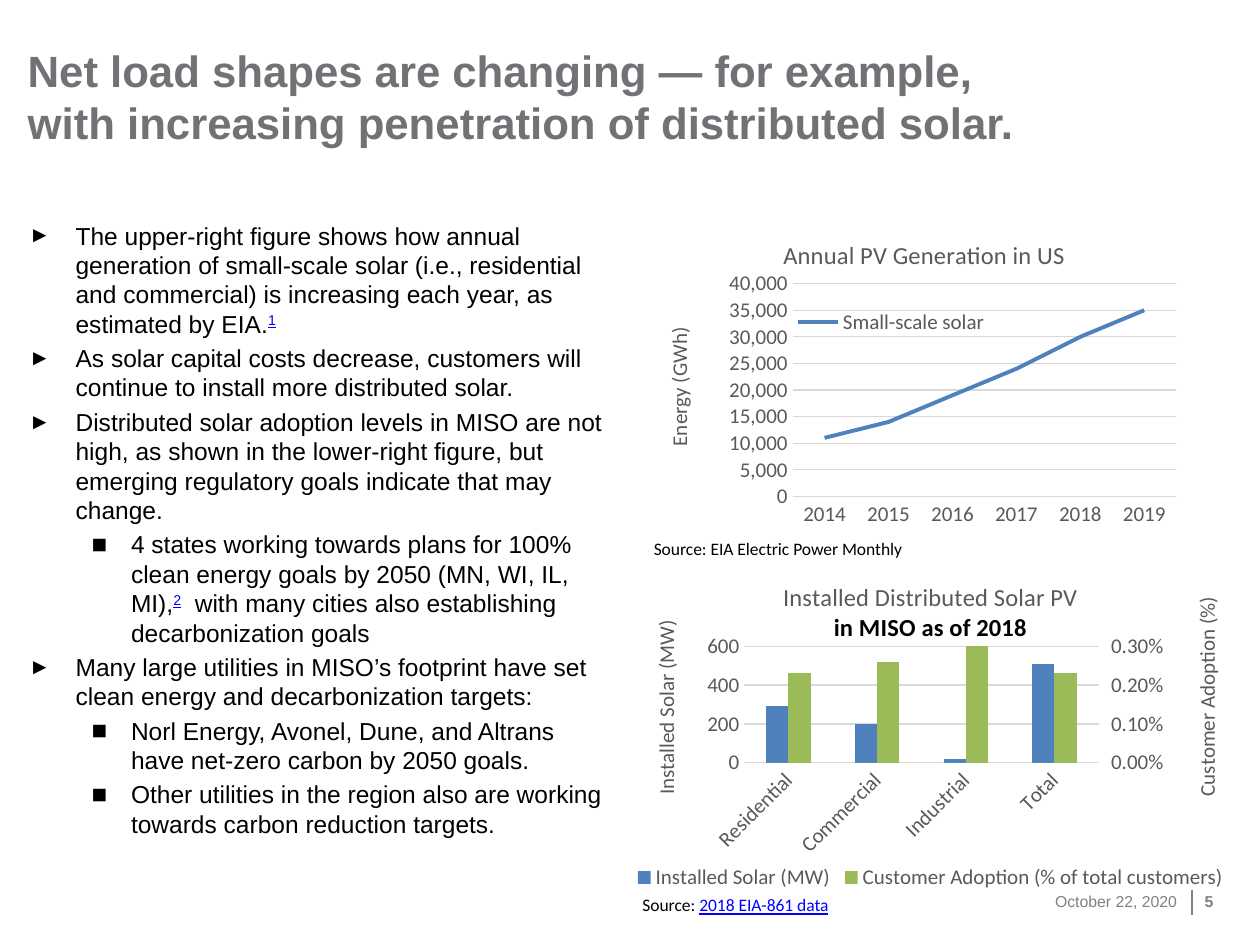
from copy import deepcopy

from lxml import etree
from pptx import Presentation
from pptx.chart.axis import ValueAxis
from pptx.chart.data import CategoryChartData
from pptx.dml.color import RGBColor
from pptx.enum.chart import XL_CHART_TYPE, XL_LEGEND_POSITION, XL_TICK_MARK
from pptx.enum.text import MSO_ANCHOR, MSO_AUTO_SIZE, PP_ALIGN
from pptx.oxml.ns import qn
from pptx.util import Inches, Pt

GRAY, LINK, BLUE, GREEN = "595959", "0000FF", "4F81BD", "9BBB59"
RULE, FOOTER = "D9D9D9", "808080"

# level, then text pieces; a piece starting with "^" is a linked note mark
POINTS = [
    (0, ["The upper-right figure shows how annual generation of small-scale solar "
         "(i.e., residential and commercial) is increasing each year, as estimated by EIA.", "^1"]),
    (0, ["As solar capital costs decrease, customers will continue to install more distributed solar."]),
    (0, ["Distributed solar adoption levels in MISO are not high, as shown in the lower-right "
         "figure, but emerging regulatory goals indicate that may change."]),
    (1, ["4 states working towards plans for 100% clean energy goals by 2050 (MN, WI, IL, MI),",
         "^2", "  with many cities also establishing decarbonization goals"]),
    (0, ["Many large utilities in MISO’s footprint have set clean energy and decarbonization targets:"]),
    (1, ["Norl Energy, Avonel, Dune, and Altrans have net-zero carbon by 2050 goals."]),
    (1, ["Other utilities in the region also are working towards carbon reduction targets."]),
]
# margin, hanging indent, bullet, bullet size
LEVELS = [(0.37, -0.37, "►", "90000"), (0.81, -0.31, "◼", "100000")]


def rgb(value):
    return RGBColor.from_string(value)


def style(font, size, color, name="Calibri", bold=False):
    font.size, font.name, font.bold = Pt(size), name, bold
    font.color.rgb = rgb(color)


def add_child(parent, tag, **attributes):
    child = etree.SubElement(parent, qn(tag))
    for key, value in attributes.items():
        child.set(key, value)
    return child


def frame(shape, inset=0, anchor=MSO_ANCHOR.TOP):
    text = shape.text_frame
    text.word_wrap, text.auto_size, text.vertical_anchor = True, MSO_AUTO_SIZE.NONE, anchor
    text.margin_left = text.margin_right = Inches(inset)
    text.margin_top = text.margin_bottom = Inches(inset / 2)
    return text


def text_box(slide, left, top, width, height, inset=0, anchor=MSO_ANCHOR.TOP):
    box = slide.shapes.add_textbox(Inches(left), Inches(top), Inches(width), Inches(height))
    return frame(box, inset, anchor)


def add_link(paragraph, words):
    run = paragraph.add_run()
    run.text = words
    run.font.underline = True
    run.font.color.rgb = rgb(LINK)
    return run


def heading(slide, left, top, width, height):
    title = slide.shapes.title
    title.left, title.top, title.width, title.height = map(Inches, (left, top, width, height))
    text = frame(title, anchor=MSO_ANCHOR.BOTTOM)
    text.text = "Net load shapes are changing — for example, with increasing penetration of distributed solar."
    text.paragraphs[0].alignment = PP_ALIGN.LEFT
    style(text.paragraphs[0].font, 25, "707276", "Arial", True)


def bullet_list(slide, left, top, width, height):
    text = text_box(slide, left, top, width, height)
    for number, (level, pieces) in enumerate(POINTS):
        point = text.add_paragraph() if number else text.paragraphs[0]
        margin, hanging, mark, mark_size = LEVELS[level]
        point.level = level
        properties = point._p.get_or_add_pPr()
        properties.set("marL", str(Inches(margin)))
        properties.set("indent", str(Inches(hanging)))
        add_child(properties, "a:buSzPct", val=mark_size)
        add_child(properties, "a:buFont", typeface="Arial")
        add_child(properties, "a:buChar", char=mark)
        if number:
            point.space_before = Pt(2.8)
        style(point.font, 14, "000000", "Arial")
        for piece in pieces:
            if piece.startswith("^"):
                note = add_link(point, piece[1:])
                note._r.get_or_add_rPr().set("baseline", "30000")
            else:
                point.add_run().text = piece


def source_line(slide, left, top, width, height, words, link=None):
    source = text_box(slide, left, top, width, height, inset=0.1).paragraphs[0]
    style(source.font, 10, "000000")
    source.add_run().text = words
    if link:
        add_link(source, link)


def place(element, **fractions):
    """Lay out a title, legend or plot area by fractions of its chart."""
    for old in element.findall(qn("c:layout")):
        element.remove(old)
    layout = etree.Element(qn("c:layout"))
    manual = add_child(layout, "c:manualLayout")
    if element.tag == qn("c:plotArea"):
        add_child(manual, "c:layoutTarget", val="inner")
    for key in "xy":
        add_child(manual, f"c:{key}Mode", val="edge")
    for key, value in fractions.items():
        add_child(manual, f"c:{key}", val=str(value))
    leading = [qn(tag) for tag in ("c:tx", "c:legendPos", "c:legendEntry")]
    element.insert(sum(child.tag in leading for child in element), layout)


def trim_legend(chart, hidden):
    """Leave the spacer series out of the legend."""
    position = chart.legend._element.find(qn("c:legendPos"))
    for number in reversed(hidden):
        entry = etree.Element(qn("c:legendEntry"))
        add_child(entry, "c:idx", val=str(number))
        add_child(entry, "c:delete", val="1")
        position.addnext(entry)


def value_axis(axis, title, x, y, maximum, step, number_format, tick=XL_TICK_MARK.NONE):
    axis.minimum_scale, axis.maximum_scale, axis.major_unit = 0, maximum, step
    axis.major_tick_mark = tick
    axis.tick_labels.number_format = number_format
    axis.tick_labels.number_format_is_linked = False
    style(axis.tick_labels.font, 12, GRAY)
    axis.format.line.fill.background()
    text = axis.axis_title.text_frame
    text.text = title
    style(text.paragraphs[0].font, 12, GRAY)
    turn = text._txBody.find(qn("a:bodyPr"))
    turn.set("rot", "-5400000")
    turn.set("vert", "horz")
    place(axis.axis_title._element, x=x, y=y)


def base_chart(slide, kind, box, categories, series, title, plot):
    data = CategoryChartData()
    data.categories = categories
    for name, values in series:
        data.add_series(name, values)
    chart = slide.shapes.add_chart(kind, *map(Inches, box), data).chart
    style(chart.font, 10, "000000")
    chart.has_title = True
    chart.chart_title.text_frame.text = title
    style(chart.chart_title.text_frame.paragraphs[0].font, 14, GRAY)
    chart.has_legend = True
    chart.legend.position = XL_LEGEND_POSITION.BOTTOM
    chart.legend.include_in_layout = False
    style(chart.legend.font, 12, GRAY)
    chart.plots[0].vary_by_categories = False
    category_axis = chart.category_axis
    category_axis.major_tick_mark = XL_TICK_MARK.NONE
    category_axis.format.line.color.rgb = rgb(RULE)
    style(category_axis.tick_labels.font, 12, GRAY)
    grid = chart.value_axis.major_gridlines.format.line
    grid.color.rgb, grid.width = rgb(RULE), Pt(0.75)
    place(chart._chartSpace.chart.plotArea, **dict(zip("xywh", plot)))
    return chart


def generation_chart(slide, *box):
    chart = base_chart(
        slide, XL_CHART_TYPE.LINE, box, ["2014", "2015", "2016", "2017", "2018", "2019"],
        [("Small-scale solar", [11000, 14000, 19000, 24000, 30000, 35000]), ("Series 2", [None] * 6)],
        "Annual PV Generation in US", (0.26, 0.19, 0.7, 0.64))
    value_axis(chart.value_axis, "Energy (GWh)", 0.02, 0.31, 40000, 5000, "#,##0")
    for series, color in zip(chart.plots[0].series, (BLUE, GREEN)):
        series.smooth = False
        series.format.line.color.rgb, series.format.line.width = rgb(color), Pt(2.25)
    trim_legend(chart, [1])
    place(chart.legend._element, x=0.23, y=0.25, w=0.42, h=0.11)


def adoption_chart(slide, *box):
    # Zero series hold the neighbouring bar slot on each axis
    chart = base_chart(
        slide, XL_CHART_TYPE.COLUMN_CLUSTERED, box,
        ["Residential", "Commercial", "Industrial", "Total"],
        [("Installed Solar (MW)", [290, 200, 20, 510]), ("Series 2", [0] * 4), ("Series 3", [0] * 4),
         ("Customer Adoption (% of total customers)", [0.0023, 0.0026, 0.0032, 0.0023])],
        "Installed Distributed Solar PV", (0.19, 0.25, 0.59, 0.35))
    second_line = chart.chart_title.text_frame.add_paragraph()
    second_line.text = "in MISO as of 2018"
    style(second_line.font, 14, "000000", bold=True)
    value_axis(chart.value_axis, "Installed Solar (MW)", 0.03, 0.16, 600, 200, "General")
    labels = chart.category_axis._element.find(qn("c:txPr"))
    labels.find(qn("a:bodyPr")).set("rot", "-2700000")
    columns = chart.plots[0]
    columns.gap_width, columns.overlap = 200, 0
    for series, color in zip(columns.series, (BLUE, "8064A2", "4BACC6", GREEN)):
        series.format.fill.solid()
        series.format.fill.fore_color.rgb = rgb(color)

    # Right axis: the last two series move to a second group of columns
    area = chart._chartSpace.chart.plotArea
    left_bars = area.find(qn("c:barChart"))
    right_bars = deepcopy(left_bars)
    left_bars.addnext(right_bars)
    for bars, dropped in ((left_bars, slice(2, 4)), (right_bars, slice(0, 2))):
        for series in bars.findall(qn("c:ser"))[dropped]:
            bars.remove(series)
    left_categories, left_values = area.find(qn("c:catAx")), area.find(qn("c:valAx"))
    right_categories, right_values = deepcopy(left_categories), deepcopy(left_values)
    left_values.addnext(right_values)
    right_values.addnext(right_categories)
    for axis, own, other in ((right_categories, "501", "502"), (right_values, "502", "501")):
        axis.find(qn("c:axId")).set("val", own)
        axis.find(qn("c:crossAx")).set("val", other)
    for reference, number in zip(right_bars.findall(qn("c:axId")), ("501", "502")):
        reference.set("val", number)
    right_categories.find(qn("c:delete")).set("val", "1")
    right_values.find(qn("c:axPos")).set("val", "r")
    right_values.find(qn("c:crosses")).set("val", "max")
    adoption = ValueAxis(right_values)
    adoption.has_major_gridlines = False
    value_axis(adoption, "Customer Adoption (%)", 0.93, 0.09, 0.003, 0.001, "0.00%",
               XL_TICK_MARK.OUTSIDE)

    trim_legend(chart, [1, 2])
    place(chart.legend._element, x=0, y=0.89, w=1, h=0.11)


def footer(slide, left, top, width, height):
    divider = left + width - 0.35
    date = text_box(slide, left, top, width - 0.47, height, anchor=MSO_ANCHOR.MIDDLE).paragraphs[0]
    date.text, date.alignment = "October 22, 2020", PP_ALIGN.RIGHT
    style(date.font, 9, FOOTER, "Arial")
    line = slide.shapes.add_connector(1, *map(Inches, (divider, top + 0.11, divider, top + 0.31)))
    line.line.color.rgb, line.line.width = rgb(FOOTER), Pt(1)
    add_child(line._element.spPr, "a:effectLst")
    page = text_box(slide, divider + 0.1, top, 0.25, height, anchor=MSO_ANCHOR.MIDDLE).paragraphs[0]
    page.text = "5"
    style(page.font, 9, FOOTER, "Arial", True)


def main():
    deck = Presentation()
    deck.slide_width, deck.slide_height = Inches(10), Inches(7.5)
    slide = deck.slides.add_slide(deck.slide_layouts[5])
    footer(slide, 8.03, 6.95, 1.78, 0.4)
    bullet_list(slide, 0.23, 1.75, 4.62, 5.45)
    heading(slide, 0.22, 0.3, 7.96, 0.88)
    generation_chart(slide, 5.16, 1.75, 4.35, 2.64)
    adoption_chart(slide, 5, 4.47, 4.77, 2.64)
    source_line(slide, 5.09, 4.22, 4.59, 0.44, "Source: EIA Electric Power Monthly")
    source_line(slide, 5, 7.05, 1.71, 0.27, "Source: ", "2018 EIA-861 data")
    deck.save("out.pptx")


if __name__ == "__main__":
    main()
